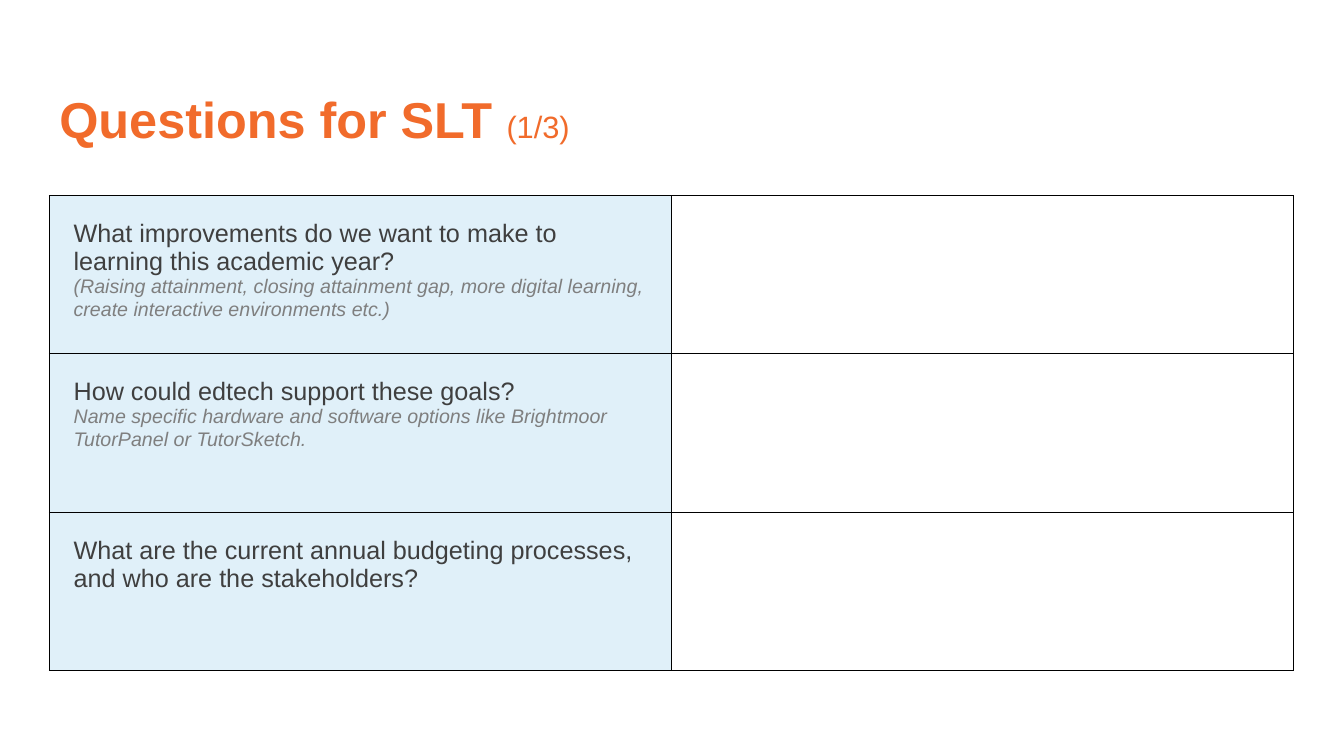
import dataclasses
import typing

import lxml.etree
import pptx
import pptx.dml.color
import pptx.enum.text
import pptx.oxml.ns
import pptx.util

SCALE = 9144


@dataclasses.dataclass(frozen=True)
class Theme:
    font: str = "Arial"
    orange: str = "F16B2B"
    dark: str = "3F3F3F"
    grey: str = "7F7F7F"
    blue: str = "E0F0F9"
    white: str = "FFFFFF"
    black: str = "000000"
    title: int = 36
    count: int = 22
    body: int = 18
    hint: int = 14
    line: float = 0.75


@dataclasses.dataclass(frozen=True)
class Query:
    text: str
    hint: str = ""


THEME = Theme()

ITEMS = [
    Query(
        "What improvements do we want to make to learning this academic year?",
        "(Raising attainment, closing attainment gap, more digital learning, "
        "create interactive environments etc.)",
    ),
    Query(
        "How could edtech support these goals?",
        "Name specific hardware and software options like Brightmoor "
        "TutorPanel or TutorSketch.",
    ),
    Query("What are the current annual budgeting processes, and who are the stakeholders?"),
]


def px(size: int) -> pptx.util.Emu:
    return pptx.util.Emu(size * SCALE)


def color(code: str) -> pptx.dml.color.RGBColor:
    return pptx.dml.color.RGBColor.from_string(code)


def apply(target: typing.Any, values: dict[str, typing.Any]) -> None:
    for name, value in values.items():
        setattr(target, name, value)


def write(para: typing.Any, text: str, size: int, tint: str,
          bold: bool = False, slant: bool = False) -> None:
    run = para.add_run()
    run.text = text
    apply(run.font, {"name": THEME.font, "size": pptx.util.Pt(size),
                     "bold": bold, "italic": slant})
    run.font.color.rgb = color(tint)


def border(cell: typing.Any) -> None:
    props = cell._tc.get_or_add_tcPr()
    qn = pptx.oxml.ns.qn
    for side in ("lnL", "lnR", "lnT", "lnB"):
        line = lxml.etree.SubElement(
            props, qn(f"a:{side}"), w=str(pptx.util.Pt(THEME.line)))
        fill = lxml.etree.SubElement(line, qn("a:solidFill"))
        lxml.etree.SubElement(fill, qn("a:srgbClr"), val=THEME.black)


def paint(cell: typing.Any, tint: str) -> None:
    border(cell)
    cell.fill.solid()
    cell.fill.fore_color.rgb = color(tint)


def head(slide: typing.Any) -> None:
    frame = slide.shapes.add_textbox(px(49), px(49), px(1150), px(145)).text_frame
    apply(frame, {"word_wrap": True,
                  "vertical_anchor": pptx.enum.text.MSO_ANCHOR.MIDDLE})
    para = frame.paragraphs[0]
    para.line_spacing = 0.9
    write(para, "Questions for SLT ", THEME.title, THEME.orange, bold=True)
    write(para, "(1/3)", THEME.count, THEME.orange)


def ask(cell: typing.Any, item: Query) -> None:
    sides = ("left", "right", "top", "bottom")
    apply(cell, {f"margin_{side}": px(24) for side in sides})
    para = cell.text_frame.paragraphs[0]
    write(para, item.text, THEME.body, THEME.dark)
    if item.hint:
        para.add_line_break()
        write(para, item.hint, THEME.hint, THEME.grey, slant=True)


def grid(slide: typing.Any, items: list[Query]) -> None:
    wide, high = 617, 157
    table = slide.shapes.add_table(
        len(items), 2, px(49), px(194), px(2 * wide), px(len(items) * high)).table
    apply(table, {"first_row": False, "horz_banding": False})
    for col in table.columns:
        col.width = px(wide)
    for row, item in zip(table.rows, items):
        row.height = px(high)
        left, right = row.cells
        ask(left, item)
        paint(left, THEME.blue)
        paint(right, THEME.white)


def main() -> None:
    deck = pptx.Presentation()
    apply(deck, {"slide_width": px(1333), "slide_height": px(750)})
    slide = deck.slides.add_slide(deck.slide_layouts[6])
    head(slide)
    grid(slide, ITEMS)
    deck.save("out.pptx")


if __name__ == "__main__":
    main()
